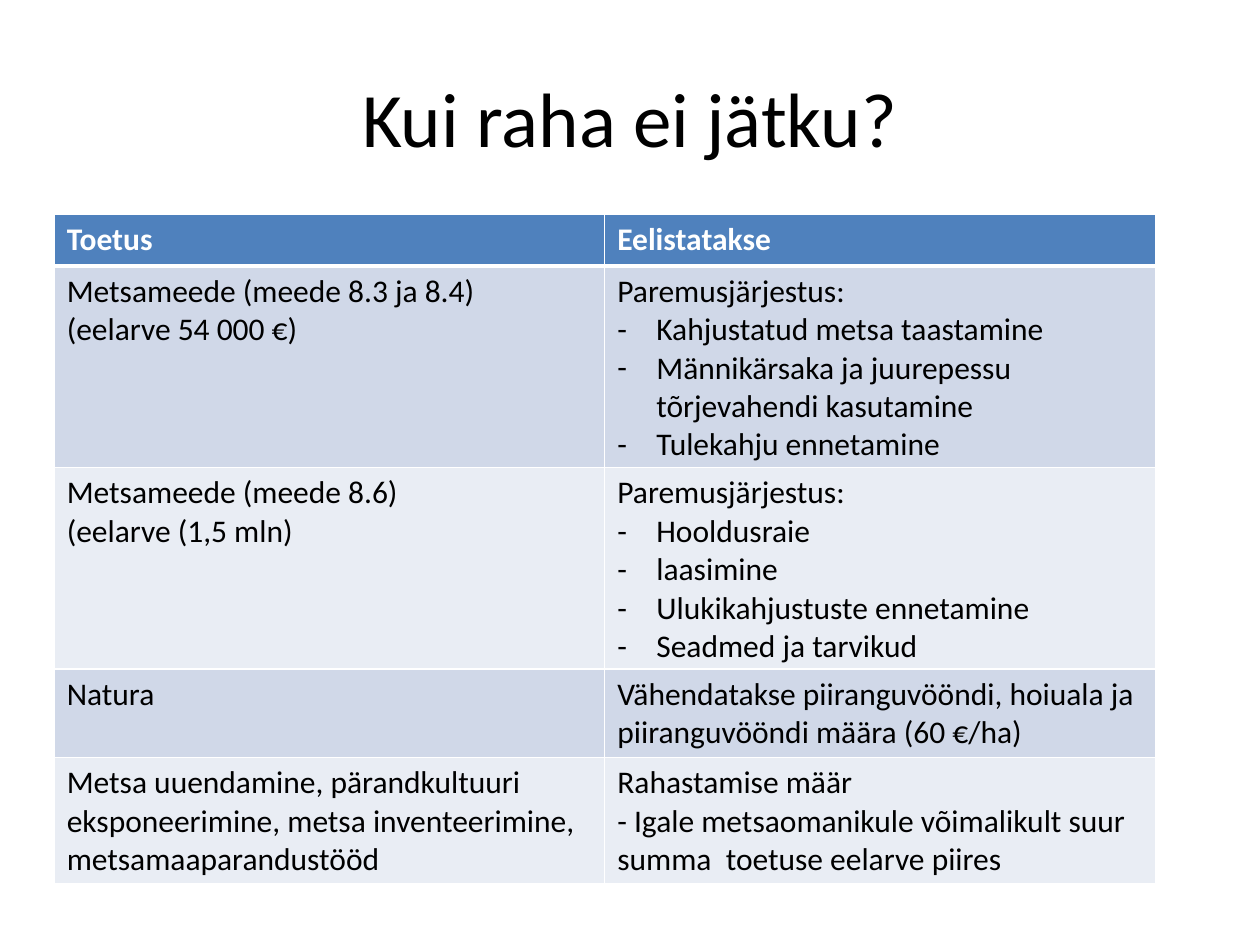
from pptx import Presentation
from pptx import util as u
from pptx.dml import color
from pptx.enum import text
from pptx.oxml import ns, xmlchemy

COLORS = {"text": "000000", "white": "FFFFFF", "header": "4F81BD",
          "odd": "D0D8E8", "even": "E9EDF4"}
FONT = "Calibri"

# Each cell holds its plain lines and its dashed list
HEADINGS = ["Toetus", "Eelistatakse"]
SUPPORTS = [
    ((["Metsameede (meede 8.3 ja 8.4)", "(eelarve 54 000 €)"], []),
     (["Paremusjärjestus:"],
      ["Kahjustatud metsa taastamine",
       "Männikärsaka ja juurepessu tõrjevahendi kasutamine",
       "Tulekahju ennetamine"])),
    ((["Metsameede (meede 8.6)", "(eelarve (1,5 mln)"], []),
     (["Paremusjärjestus:"],
      ["Hooldusraie", "laasimine", "Ulukikahjustuste ennetamine",
       "Seadmed ja tarvikud"])),
    ((["Natura"], []),
     (["Vähendatakse piiranguvööndi, hoiuala ja piiranguvööndi määra (60 €/ha)"], [])),
    ((["Metsa uuendamine, pärandkultuuri eksponeerimine, metsa inventeerimine, "
       "metsamaaparandustööd"], []),
     (["Rahastamise määr",
       "- Igale metsaomanikule võimalikult suur summa  toetuse eelarve piires"], [])),
]


def rgb(name):
    return color.RGBColor.from_string(COLORS[name])


def add_span(para, wording, ink, **formats):
    span = para.add_run()
    span.text = wording
    for name, value in {"name": FONT, **formats}.items():
        setattr(span.font, name, value)
    span.font.color.rgb = rgb(ink)


def add_dash(para):
    props = para._p.get_or_add_pPr()
    indent = u.Inches(0.31)
    props.set("marL", str(indent))
    props.set("indent", str(-indent))
    xmlchemy.OxmlElement("a:buFont")
    for tag, key, value in (("a:buFont", "typeface", FONT), ("a:buChar", "char", "-")):
        props.append(props.makeelement(ns.qn(tag), {key: value}))


def set_border(cell, side, points):
    props = cell._tc.get_or_add_tcPr()
    line = xmlchemy.OxmlElement(f"a:ln{side}")
    line.set("w", str(u.Pt(points)))
    fill = xmlchemy.OxmlElement("a:solidFill")
    ink = xmlchemy.OxmlElement("a:srgbClr")
    ink.set("val", COLORS["white"])
    fill.append(ink)
    line.append(fill)
    props.append(line)


def fill_cell(cell, content, row):
    lines, dashes = content
    header = row == 0
    # Borders come before the fill; the rule below the header is thicker
    widths = {"L": 1, "R": 1, "T": 3 if row == 1 else 1, "B": 3 if header else 1}
    for side, points in widths.items():
        set_border(cell, side, points)
    cell.fill.solid()
    cell.fill.fore_color.rgb = rgb("header" if header else "odd" if row % 2 else "even")

    for index, wording in enumerate(lines + dashes):
        frame = cell.text_frame
        para = frame.add_paragraph() if index else frame.paragraphs[0]
        if index >= len(lines):
            add_dash(para)
        add_span(para, wording, "white" if header else "text", size=u.Pt(18), bold=header)


def add_title(page, left, top, width, height):
    box = page.shapes.add_textbox(left, top, width, height)
    frame = box.text_frame
    frame.word_wrap = True
    frame.vertical_anchor = text.MSO_ANCHOR.MIDDLE
    para = frame.paragraphs[0]
    para.alignment = text.PP_ALIGN.CENTER
    add_span(para, "Kui raha ei jätku?", "text", size=u.Pt(44))


def add_support_table(page, left, top, width, row_height):
    rows = [[([heading], []) for heading in HEADINGS], *SUPPORTS]
    table = page.shapes.add_table(len(rows), len(HEADINGS), left, top, width,
                                  row_height * len(rows)).table
    for row, contents in enumerate(rows):
        table.rows[row].height = row_height
        for column, content in enumerate(contents):
            fill_cell(table.cell(row, column), content, row)


def main():
    deck = Presentation()
    deck.slide_width, deck.slide_height = u.Inches(10), u.Inches(7.5)
    page = deck.slides.add_slide(deck.slide_layouts[6])
    add_title(page, u.Inches(0.5), u.Inches(0.3), u.Inches(9), u.Inches(1.25))
    # Rows grow to fit their wording
    add_support_table(page, u.Inches(0.43), u.Inches(1.7), u.Inches(8.74), u.Inches(0.41))
    deck.save("out.pptx")


if __name__ == "__main__":
    main()
